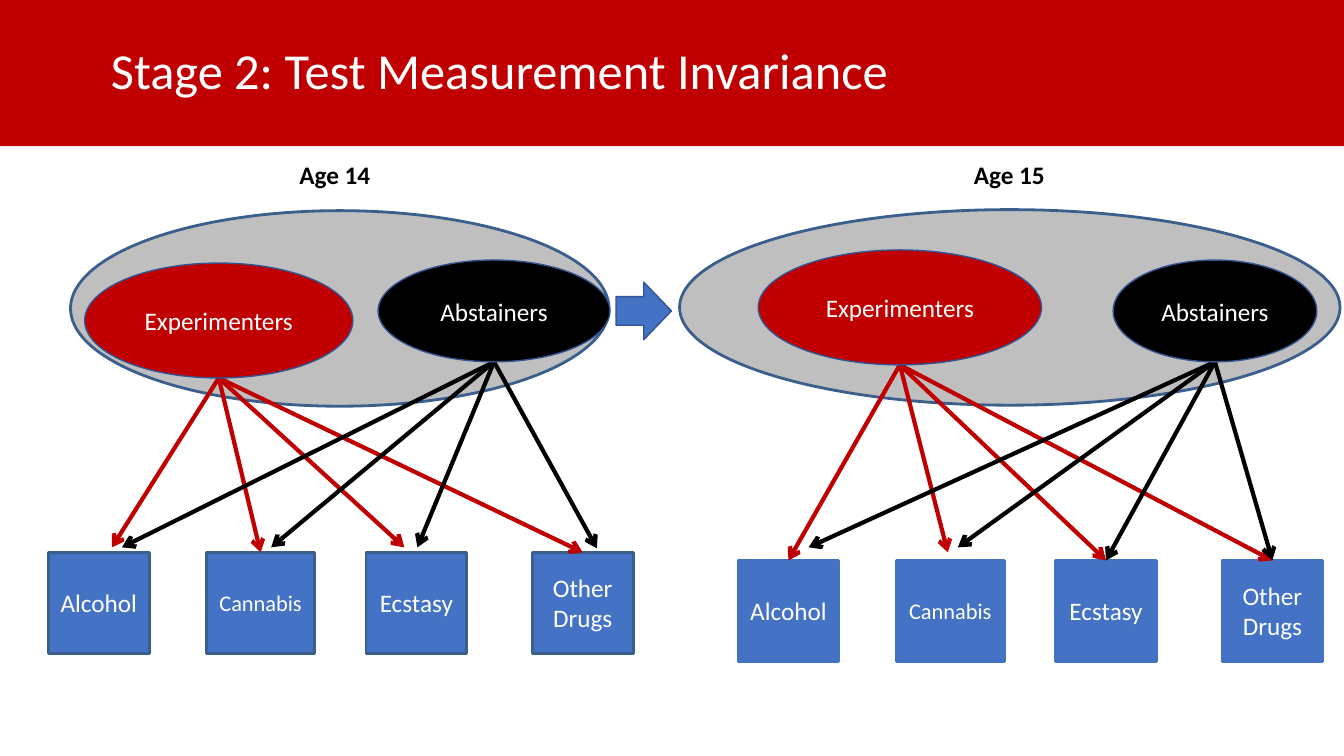
from lxml import etree
from pptx import Presentation
from pptx.dml.color import RGBColor
from pptx.enum.shapes import MSO_CONNECTOR, MSO_SHAPE
from pptx.enum.text import MSO_ANCHOR, MSO_AUTO_SIZE, PP_ALIGN
from pptx.oxml.ns import qn
from pptx.util import Inches, Pt

RED = RGBColor(0xC0, 0x00, 0x00)
BLACK = RGBColor(0x00, 0x00, 0x00)
WHITE = RGBColor(0xFF, 0xFF, 0xFF)
GREY = RGBColor(0xBF, 0xBF, 0xBF)
BLUE = RGBColor(0x44, 0x72, 0xC4)
STEEL = RGBColor(0x3A, 0x5F, 0x8C)
NAVY = RGBColor(0x32, 0x54, 0x91)
FONT = "Calibri"

# Content: positions are (left, top, width, height) in inches
TITLE = "Stage 2: Test Measurement Invariance"
# Drug, offset from the first box, width, text size
DRUGS = [
    ("Alcohol", 0, 1, 18),
    ("Cannabis", 1.57, 1.07, 16),
    ("Ecstasy", 3.15, 1, 18),
    ("Other Drugs", 4.8, 1, 18),
]
# Each class: name, colour, oval, arrow tips per drug (None: top of the drug box)
WAVES = [
    {
        "age": "Age 14", "age_left": 2.87,
        "population": (0.7, 2.09, 5.34, 1.94),
        "drugs_at": (0.48, 5.48), "drug_line": STEEL,
        "classes": [
            ("Experimenters", RED, (0.84, 2.61, 2.66, 1.14),
             [(1.11, 5.43), None, (4.01, 5.43), None]),
            ("Abstainers", BLACK, (3.75, 2.58, 2.3, 1.01),
             [(1.21, 5.43), (2.69, 5.43), (4.14, 5.43), (5.92, 5.44)]),
        ],
    },
    {
        "age": "Age 15", "age_left": 9.56,
        "population": (6.74, 2.08, 6.55, 1.94),
        "drugs_at": (7.32, 5.56), "drug_line": BLUE,
        "classes": [
            ("Experimenters", RED, (7.52, 2.48, 2.81, 1.14),
             [None, (9.4, 5.48), None, None]),
            ("Abstainers", BLACK, (11.04, 2.58, 2.02, 1.01),
             [(8.02, 5.43), (9.5, 5.43), None, None]),
        ],
    },
]
TRANSITION = (6.11, 2.8, 0.55, 0.57)

prs = Presentation()
prs.slide_width, prs.slide_height = Inches(13.33), Inches(7.5)
slide = prs.slides.add_slide(prs.slide_layouts[6])
shapes = slide.shapes


def write(shape, text, size, color, align=PP_ALIGN.CENTER, bold=False):
    frame = shape.text_frame
    frame.text = text
    frame.vertical_anchor = MSO_ANCHOR.MIDDLE
    paragraph = frame.paragraphs[0]
    paragraph.alignment = align
    font = paragraph.runs[0].font
    font.name, font.size, font.bold = FONT, Pt(size), bold
    font.color.rgb = color


def add_figure(preset, at, fill, line=None, line_width=1):
    figure = shapes.add_shape(preset, *map(Inches, at))
    figure.shadow.inherit = False
    figure.fill.solid()
    figure.fill.fore_color.rgb = fill
    if line is None:
        figure.line.fill.background()
    else:
        figure.line.color.rgb = line
        figure.line.width = Pt(line_width)
    return figure


def add_arrow(start, tip, drug_box, color):
    end = tip or (0, 0)
    arrow = shapes.add_connector(MSO_CONNECTOR.STRAIGHT, *map(Inches, (*start, *end)))
    if tip is None:
        arrow.end_connect(drug_box, 0)
    arrow.line.color.rgb = color
    arrow.line.width = Pt(3)
    etree.SubElement(arrow.line._get_or_add_ln(), qn("a:tailEnd"), type="arrow")
    etree.SubElement(arrow._element.spPr, qn("a:effectLst"))


# Title band
band = add_figure(MSO_SHAPE.RECTANGLE, (0, 0, 13.33, 1.45), RED)
write(band, TITLE, 36, WHITE, PP_ALIGN.LEFT)
band.text_frame.margin_left = Inches(1.1)
band.text_frame.paragraphs[0].line_spacing = 0.9

for wave in WAVES:
    # Age label
    age = shapes.add_textbox(Inches(wave["age_left"]), Inches(1.53), Inches(0.91), Inches(0.4))
    write(age, wave["age"], 18, BLACK, PP_ALIGN.LEFT, bold=True)
    age.text_frame.word_wrap = False
    age.text_frame.auto_size = MSO_AUTO_SIZE.SHAPE_TO_FIT_TEXT

    # Drug boxes
    left, top = wave["drugs_at"]
    drug_boxes = []
    for drug, offset, width, size in DRUGS:
        box = add_figure(MSO_SHAPE.RECTANGLE, (left + offset, top, width, 1),
                         BLUE, wave["drug_line"], 2)
        write(box, drug, size, WHITE)
        drug_boxes.append(box)

    # Population, then each class with its arrows underneath
    add_figure(MSO_SHAPE.OVAL, wave["population"], GREY, STEEL, 2)
    for name, color, at, tips in wave["classes"]:
        x, y, width, height = at
        for tip, box in zip(tips, drug_boxes):
            add_arrow((x + width / 2, y + height), tip, box, color)
        write(add_figure(MSO_SHAPE.OVAL, at, color, NAVY), name, 18, WHITE)

# Transition between the ages
add_figure(MSO_SHAPE.RIGHT_ARROW, TRANSITION, BLUE, NAVY)

prs.save("out.pptx")
